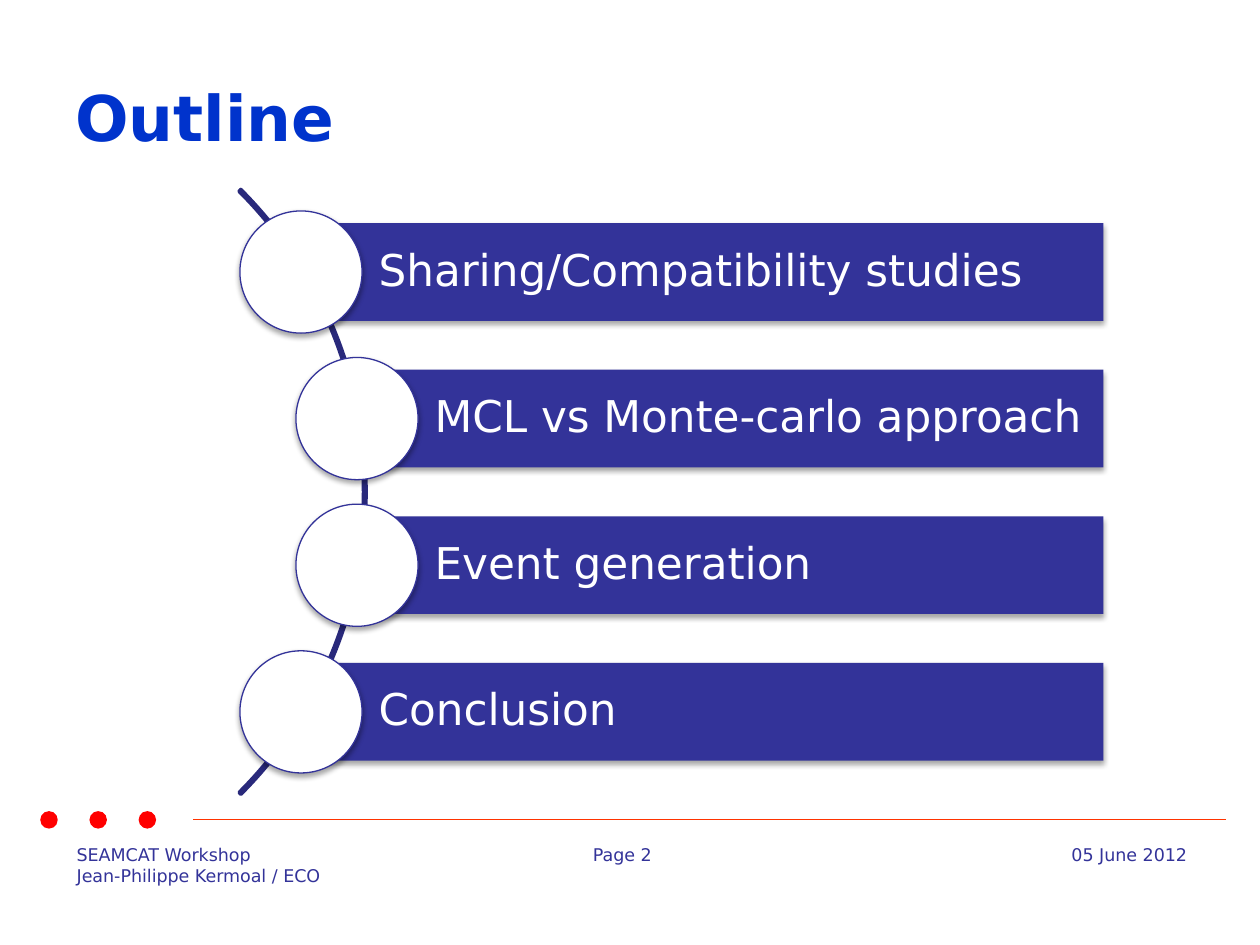
from lxml import etree
from pptx import Presentation
from pptx import util as u
from pptx.dml.color import RGBColor
from pptx.enum import shapes, text
from pptx.oxml.ns import qn

FONT = "DejaVu Sans"
NAVY, WHITE, RED = "333399", "FFFFFF", "FF0000"


def color(value):
    return RGBColor.from_string(value)


def format_text(text_frame, size, value, bold=False, align=text.PP_ALIGN.LEFT):
    for paragraph in text_frame.paragraphs:
        paragraph.alignment = align
        for run in paragraph.runs:
            run.font.name = FONT
            run.font.size = u.Pt(size)
            run.font.bold = bold
            run.font.color.rgb = color(value)


def add_label(slide, left, top, width, height, words, size, value,
              bold=False, align=text.PP_ALIGN.LEFT, wrap=True,
              anchor=text.MSO_ANCHOR.TOP):
    box = slide.shapes.add_textbox(u.Pt(left), u.Pt(top), u.Pt(width), u.Pt(height))
    text_frame = box.text_frame
    text_frame.word_wrap = wrap
    text_frame.vertical_anchor = anchor
    text_frame.text = words
    format_text(text_frame, size, value, bold, align)


def add_figure(slide, kind, left, top, width, height, fill=None, line=None, weight=0.75):
    shape = slide.shapes.add_shape(kind, u.Pt(left), u.Pt(top), u.Pt(width), u.Pt(height))
    shape.shadow.inherit = False
    if fill:
        shape.fill.solid()
        shape.fill.fore_color.rgb = color(fill)
    else:
        shape.fill.background()
    if line:
        shape.line.color.rgb = color(line)
        shape.line.width = u.Pt(weight)
    else:
        shape.line.fill.background()
    return shape


def add_shadow(shape):
    effects = shape._element.spPr.find(qn("a:effectLst"))
    shadow = etree.SubElement(effects, qn("a:outerShdw"), blurRad=str(u.Pt(3.1)),
                              dist=str(u.Pt(1.8)), dir="5400000", rotWithShape="0")
    tint = etree.SubElement(shadow, qn("a:srgbClr"), val="000000")
    etree.SubElement(tint, qn("a:alpha"), val="35000")


def add_title(slide, left, top, width, height, words):
    add_label(slide, left, top, width, height, words, 36, "0033CC",
              bold=True, anchor=text.MSO_ANCHOR.MIDDLE)


def add_outline(slide, left, top, width, height, topics):
    bar_height = height / (1.5 * len(topics) - 0.5)
    diameter = 1.25 * bar_height
    arc_size = 488.8
    arc_right = left + 37.2
    arc = add_figure(slide, shapes.MSO_SHAPE.BLOCK_ARC, arc_right - arc_size,
                     top + (height - arc_size) / 2, arc_size, arc_size,
                     line="29297B", weight=2)
    for index, value in enumerate((189, 27, 0.003)):
        arc.adjustments[index] = value

    for index, topic in enumerate(topics):
        indent = 0 if index in (0, len(topics) - 1) else 32
        bar_left = left + indent
        bar_top = top + 1.5 * bar_height * index
        bar = add_figure(slide, shapes.MSO_SHAPE.RECTANGLE, bar_left, bar_top,
                         width - indent, bar_height, NAVY)
        add_shadow(bar)
        text_frame = bar.text_frame
        text_frame.word_wrap = True
        text_frame.vertical_anchor = text.MSO_ANCHOR.MIDDLE
        text_frame.margin_left = u.Pt(44.4)
        text_frame.margin_right = u.Pt(5)
        text_frame.margin_top = text_frame.margin_bottom = u.Pt(5)
        text_frame.text = topic
        text_frame.paragraphs[0].line_spacing = 0.9
        format_text(text_frame, 25, WHITE)
        circle = add_figure(slide, shapes.MSO_SHAPE.OVAL, bar_left - diameter / 2,
                            bar_top + (bar_height - diameter) / 2,
                            diameter, diameter, WHITE, NAVY)
        add_shadow(circle)


def add_footer(slide, left, top, width, author, page, date):
    dot = 10
    for index in range(3):
        add_figure(slide, shapes.MSO_SHAPE.OVAL, left + 28.1 * index, top, dot, dot, RED)
    middle = u.Pt(top + dot / 2)
    rule = slide.shapes.add_connector(shapes.MSO_CONNECTOR.STRAIGHT,
                                      u.Pt(left + 87.5), middle, u.Pt(left + width), middle)
    rule.line.color.rgb = color("FF3300")
    rule.line.width = u.Pt(0.75)
    etree.SubElement(rule._element.spPr, qn("a:effectLst"))

    label_top = top + 15.3
    add_label(slide, left + 13.7, label_top, 159, 31, author, 10, NAVY, wrap=False)
    add_label(slide, left + 308.7, label_top, 59, 19.4, page, 10, NAVY, wrap=False)
    add_label(slide, left + 545, label_top, 117.4, 19.4, date, 10, NAVY,
              align=text.PP_ALIGN.RIGHT)


def main():
    presentation = Presentation()
    presentation.slide_width = u.Pt(720)
    presentation.slide_height = u.Pt(540)
    slide = presentation.slides.add_slide(presentation.slide_layouts[6])
    add_footer(slide, 23, 463.5, 677.5,
               "SEAMCAT Workshop\nJean-Philippe Kermoal / ECO", "Page 2", "05 June 2012")
    add_title(slide, 36, 21.6, 648, 90, "Outline")
    add_outline(slide, 172, 127.5, 458.6, 307.2,
                ("Sharing/Compatibility studies", "MCL vs Monte-carlo approach",
                 "Event generation", "Conclusion"))
    presentation.save("out.pptx")


if __name__ == "__main__":
    main()
